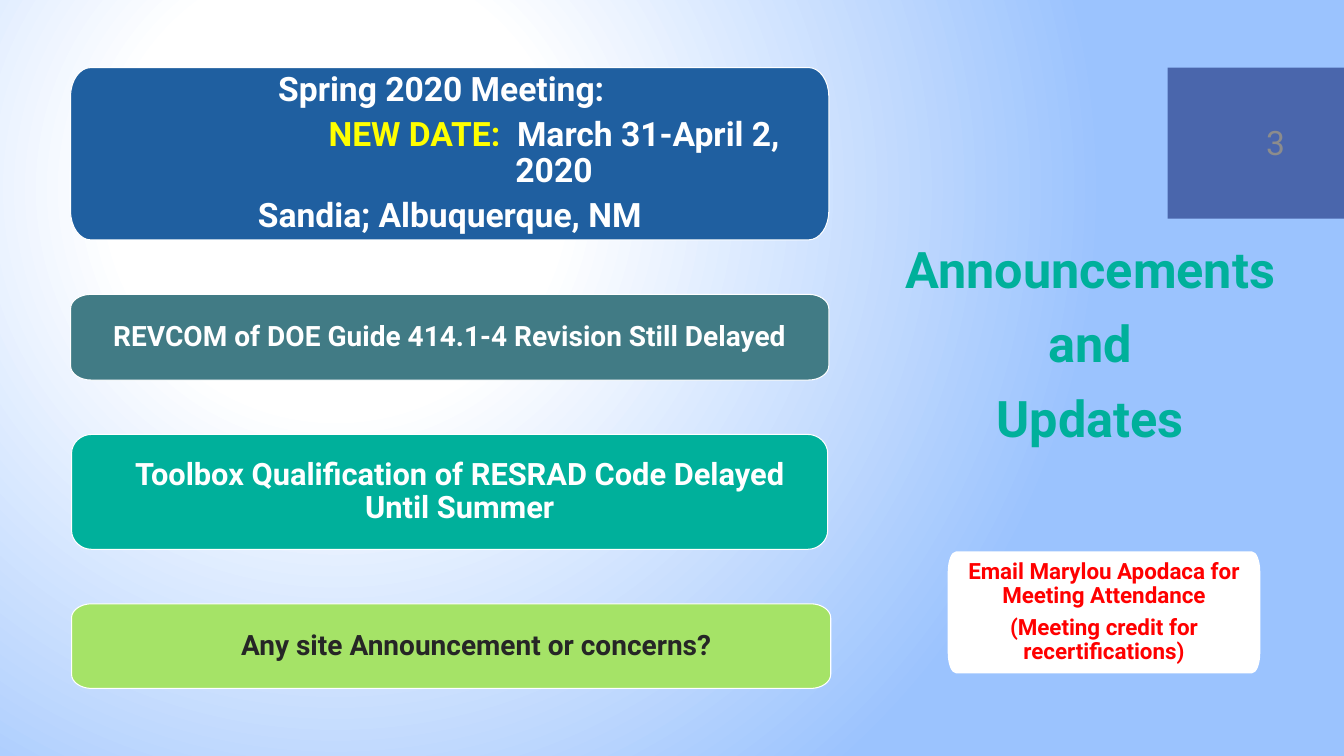
from lxml.etree import Element, SubElement
from pptx import Presentation
from pptx.dml.color import RGBColor
from pptx.enum.shapes import MSO_SHAPE
from pptx.enum.text import MSO_ANCHOR, PP_ALIGN
from pptx.oxml.ns import qn
from pptx.util import Inches, Pt

WHITE = RGBColor(0xFF, 0xFF, 0xFF)
SKY = RGBColor(0x9B, 0xC3, 0xFE)
BLUE = RGBColor(0x1F, 0x5F, 0xA0)
SLATE = RGBColor(0x41, 0x7B, 0x85)
TEAL = RGBColor(0x00, 0xB0, 0x9B)
LIME = RGBColor(0xA5, 0xE3, 0x67)
INDIGO = RGBColor(0x4A, 0x66, 0xAC)
YELLOW = RGBColor(0xFF, 0xFF, 0x00)
RED = RGBColor(0xFF, 0x00, 0x00)
DARK = RGBColor(0x26, 0x26, 0x26)
GRAY = RGBColor(0x8C, 0x8C, 0x8C)
FONT = "Roboto"

# Paragraph: (runs as (text, colour), left margin, first-line indent)
MEETING = [
    ([("Spring 2020 Meeting:  ", WHITE)], 0, 0),
    ([("\t", WHITE), ("NEW DATE:  ", YELLOW),
      ("March 31-April 2, 2020", WHITE)], 2.07, -2.07),
    ([("Sandia; Albuquerque, NM", WHITE)], 2.07, -2.07),
]
REVCOM = [([("REVCOM of DOE Guide 414.1-4 Revision Still Delayed", WHITE)], 0, 0)]
TOOLBOX = [([("Toolbox Qualification of RESRAD Code Delayed Until Summer", WHITE)], 0.2, 0)]
SITES = [([("Any site Announcement or concerns?", DARK)], 0.5, 0)]
EMAIL = [
    ([("Email Marylou Apodaca for Meeting Attendance", RED)], 0, 0),
    ([("(Meeting credit for recertifications)", RED)], 0, 0),
]
TITLE = [([(word, TEAL)], 0, 0) for word in ("Announcements", "and", "Updates")]

# Stacked cards: left, width, height, fill, text size, space after, content
TOP, GAP = 0.67, 0.54
CARDS = [
    (0.7, 7.52, 1.71, BLUE, 24, 6, MEETING),
    (0.7, 7.52, 0.85, SLATE, 20, 6, REVCOM),
    (0.71, 7.5, 1.14, TEAL, 22, 8, TOOLBOX),
    (0.71, 7.53, 0.84, LIME, 20, 3, SITES),
]
BEND = 0.55  # pull of a curve towards its corner

deck = Presentation()
deck.slide_width, deck.slide_height = Inches(13.33), Inches(7.5)
slide = deck.slides.add_slide(deck.slide_layouts[6])
shapes = slide.shapes


def write(frame, paras, size, bold=True, align=PP_ALIGN.CENTER,
          before=0, after=0, line=None):
    frame.word_wrap = True
    for i, (runs, margin, indent) in enumerate(paras):
        para = frame.paragraphs[0] if i == 0 else frame.add_paragraph()
        para.alignment = align
        if line:
            para.line_spacing = line
        if before and i:
            para.space_before = Pt(before)
        if after:
            para.space_after = Pt(after)
        props = para._p.get_or_add_pPr()
        props.set("marL", str(Inches(margin)))
        props.set("indent", str(Inches(indent)))
        if indent:
            tabs = SubElement(props, qn("a:tabLst"))
            SubElement(tabs, qn("a:tab"), pos=str(Inches(0.5)), algn="l")
        for text, color in runs:
            run = para.add_run()
            run.text = text
            run.font.name, run.font.size = FONT, Pt(size)
            run.font.bold, run.font.color.rgb = bold, color


def outline(left, top, wide, high):
    # Eight points, then each cut corner becomes an elliptical curve
    x, y, w, h = (Inches(n) for n in (left, top, wide, high))
    rx, ry = round(w / 37.5), round(h / 6)
    points = [(0, ry), (rx, 0), (w - rx, 0), (w, ry),
              (w, h - ry), (w - rx, h), (rx, h), (0, h - ry)]
    # Walk on from the lower left so that every corner is one segment
    pen = shapes.build_freeform(x, y + ry)
    pen.add_line_segments([(x + px, y + py) for px, py in points[1:]], close=True)
    shape = pen.convert_to_shape()
    cuts = shape._element.xpath(".//a:lnTo")[0::2]
    ends = points[1::2]
    # The last cut runs from the lower edge up to the left side
    for i, (cut, corner) in enumerate(zip(cuts, [(0, 0), (w, 0), (w, h), (0, h)])):
        start, end = points[2 * i], ends[i]
        curve = Element(qn("a:cubicBezTo"))
        for base in (start, end):
            px, py = (round(b + BEND * (c - b)) for b, c in zip(base, corner))
            SubElement(curve, qn("a:pt"), x=str(px), y=str(py))
        SubElement(curve, qn("a:pt"), x=str(end[0]), y=str(end[1]))
        cut.getparent().replace(cut, curve)
    return shape


def card(left, top, wide, high, fill, size, after, paras, edge=True):
    shape = outline(left, top, wide, high)
    shape.shadow.inherit = False
    shape.fill.solid()
    shape.fill.fore_color.rgb = fill
    if edge:
        shape.line.color.rgb, shape.line.width = WHITE, Pt(0.75)
    else:
        shape.line.fill.background()
    frame = shape.text_frame
    frame.vertical_anchor = MSO_ANCHOR.MIDDLE
    frame.margin_left = frame.margin_right = Inches(0.15)
    frame.margin_top = frame.margin_bottom = Inches(0.15)
    write(frame, paras, size, after=after, line=0.9)


# Background: round glow centred up and left
back = slide.background.fill
back.gradient()
for stop, color, place in zip(back.gradient_stops, (WHITE, SKY), (0.29, 1)):
    stop.color.rgb, stop.position = color, place
lin = slide._element.xpath(".//p:bg//a:lin")[0]
grad = lin.getparent()
grad.remove(lin)
glow = SubElement(grad, qn("a:path"), path="circle")
SubElement(glow, qn("a:fillToRect"), l="50000", t="50000", r="100000", b="100000")

# Attendance note and title
card(9.4, 5.47, 3.1, 1.21, WHITE, 16, 5.6, EMAIL, edge=False)
title = shapes.add_textbox(Inches(8.65), Inches(2.31), Inches(4.33), Inches(2.92))
write(title.text_frame, TITLE, 36, before=10)

# Announcement cards
top = TOP
for left, wide, high, *rest in CARDS:
    card(left, top, wide, high, *rest)
    top += high + GAP

# Page number on its block
block = shapes.add_shape(MSO_SHAPE.RECTANGLE, Inches(11.58), Inches(TOP),
                         Inches(1.75), Inches(1.5))
block.shadow.inherit = False
block.fill.solid()
block.fill.fore_color.rgb = INDIGO
block.line.fill.background()
page = shapes.add_textbox(Inches(12.46), Inches(1.14), Inches(0.66), Inches(0.54))
page.text_frame.vertical_anchor = MSO_ANCHOR.MIDDLE
write(page.text_frame, [([("3", GRAY)], 0, 0)], 24, bold=False, align=PP_ALIGN.LEFT)

deck.save("out.pptx")
